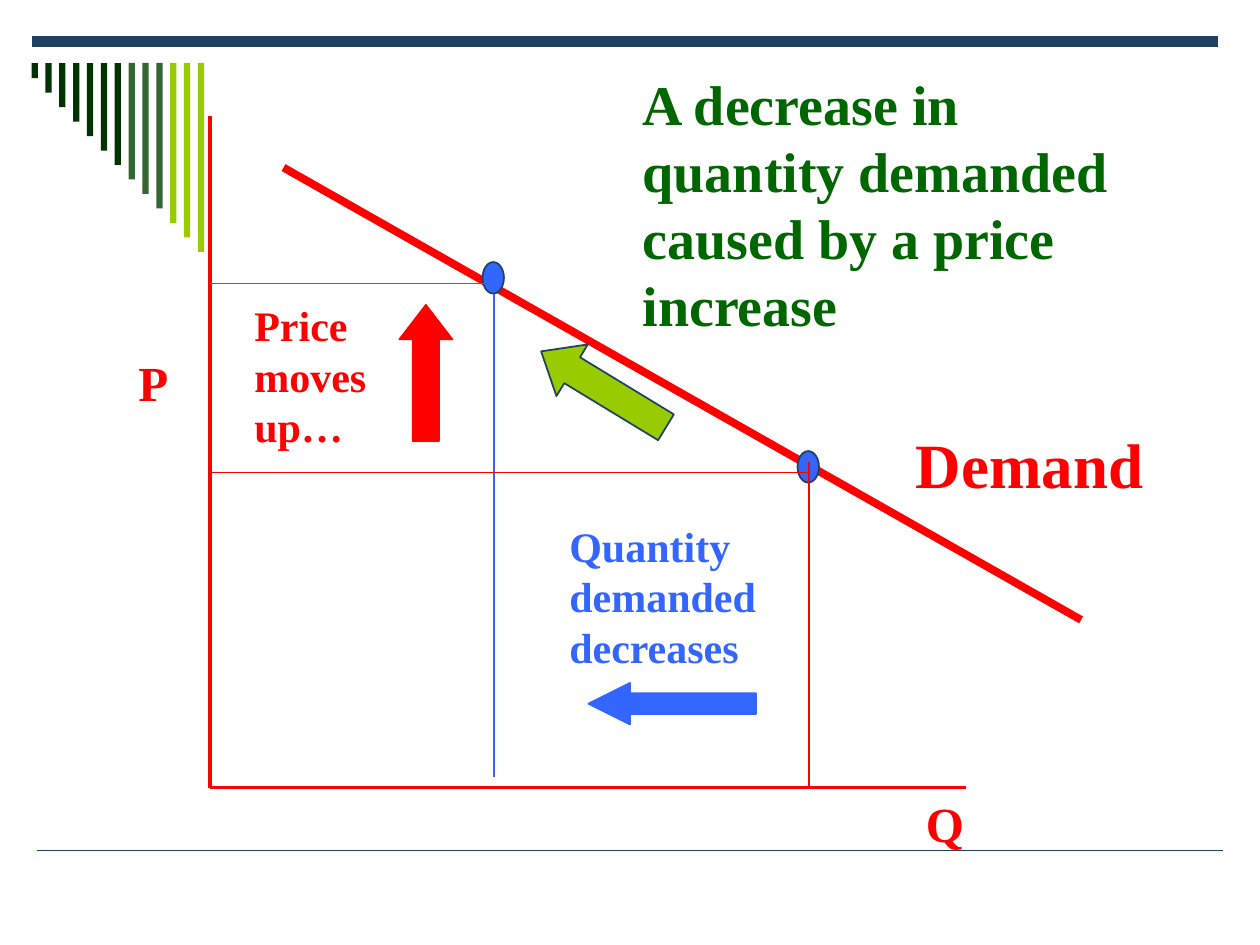
from dataclasses import dataclass

from pptx import Presentation
from pptx.dml.color import RGBColor
from pptx.enum.shapes import MSO_CONNECTOR, MSO_SHAPE
from pptx.enum.text import MSO_ANCHOR, MSO_AUTO_SIZE, PP_ALIGN
from pptx.oxml.ns import qn
from pptx.util import Inches, Pt

STRAIGHT = MSO_CONNECTOR.STRAIGHT
RECTANGLE = MSO_SHAPE.RECTANGLE
OVAL = MSO_SHAPE.OVAL
UP_ARROW = MSO_SHAPE.UP_ARROW
LEFT_ARROW = MSO_SHAPE.LEFT_ARROW
DOWN_ARROW = MSO_SHAPE.DOWN_ARROW

COLORS = {
    "navy": "204162",
    "red": "FF0000",
    "blue": "3366FF",
    "lime": "99CC00",
    "moss": "336633",
    "forest": "003300",
    "title": "006600",
}
FRAME_FORMAT = {
    "word_wrap": True,
    "auto_size": MSO_AUTO_SIZE.NONE,
    "vertical_anchor": MSO_ANCHOR.TOP,
}
FONT_FORMAT = {"name": "Times New Roman", "bold": True}


@dataclass
class Line:
    start: tuple[float, float]
    end: tuple[float, float]
    color: str
    weight: float


@dataclass
class Label:
    text: str
    box: tuple[float, float, float, float]
    size: int
    color: str


@dataclass
class Block:
    kind: int
    box: tuple[float, float, float, float]
    fill: str
    outline: str | None = None
    adjustments: tuple[float, ...] = ()
    rotation: float = 0


def rgb(color: str) -> RGBColor:
    return RGBColor.from_string(COLORS[color])


def draw_line(slide, line: Line) -> None:
    connector = slide.shapes.add_connector(
        STRAIGHT, *(Inches(v) for v in line.start + line.end))
    connector.line.color.rgb = rgb(line.color)
    connector.line.width = Pt(line.weight)
    properties = connector._element.spPr
    properties.append(properties.makeelement(qn("a:effectLst"), {}))


def draw_block(slide, block: Block) -> None:
    shape = slide.shapes.add_shape(block.kind, *(Inches(v) for v in block.box))
    shape.shadow.inherit = False
    shape.fill.solid()
    shape.fill.fore_color.rgb = rgb(block.fill)
    if block.outline:
        shape.line.color.rgb = rgb(block.outline)
        shape.line.width = Pt(1)
    else:
        shape.line.fill.background()
    for index, value in enumerate(block.adjustments):
        shape.adjustments[index] = value
    shape.rotation = block.rotation


def write_label(shape, label: Label) -> None:
    shape.left, shape.top, shape.width, shape.height = (
        Inches(v) for v in label.box)
    frame = shape.text_frame
    for name, value in FRAME_FORMAT.items():
        setattr(frame, name, value)
    paragraph = frame.paragraphs[0]
    paragraph.alignment = PP_ALIGN.LEFT
    run = paragraph.add_run()
    run.text = label.text
    for name, value in FONT_FORMAT.items():
        setattr(run.font, name, value)
    run.font.size = Pt(label.size)
    run.font.color.rgb = rgb(label.color)


def draw_label(slide, label: Label) -> None:
    box = (Inches(v) for v in label.box)
    write_label(slide.shapes.add_textbox(*box), label)


RULES = [
    Line((0.29, 6.75), (9.71, 6.75), "navy", 1),
    Line((0.25, 0.33), (9.67, 0.33), "navy", 6),
]
BAR_COLORS = ["forest"] * 7 + ["moss"] * 3 + ["lime"] * 3
BARS = [
    Block(RECTANGLE, (0.25 + 0.11 * i, 0.5, 0.05, 0.12 + 0.115 * i), color)
    for i, color in enumerate(BAR_COLORS)
]
AXES_AND_DEMAND = [
    Line((1.67, 0.92), (1.67, 6.25), "red", 2.25),
    Line((1.67, 6.25), (7.67, 6.25), "red", 2.25),
    Line((2.25, 1.33), (8.58, 4.92), "red", 4.5),
]
POINTS = [
    Block(OVAL, (left, top, 0.17, 0.25), "blue", "navy")
    for left, top in ((6.33, 3.58), (3.83, 2.08))
]
GUIDES = [
    Line((3.92, 2.25), (1.67, 2.25), "blue", 1),
    Line((3.92, 2.33), (3.92, 6.17), "blue", 1),
    Line((1.67, 3.75), (6.42, 3.75), "red", 1),
    Line((6.42, 3.67), (6.42, 6.25), "red", 1),
]
ARROWS = [
    Block(UP_ARROW, (3.17, 2.42, 0.42, 1.08), "red", "red", (0.5, 0.65)),
    Block(LEFT_ARROW, (4.67, 5.42, 1.33, 0.33), "blue", "blue", (0.5, 1)),
    Block(DOWN_ARROW, (4.55, 2.51, 0.48, 1.16), "lime", "navy",
          (0.5, 0.6), 121.3),
]
TITLE = Label("A decrease in quantity demanded caused by a price increase",
              (5, 0.5, 4.08, 2.23), 32, "title")
LABELS = [
    Label("P", (1, 2.75, 0.5, 0.57), 28, "red"),
    Label("Q", (7.25, 6.25, 1, 0.57), 28, "red"),
    Label("Demand", (7.17, 3.33, 2.25, 0.7), 36, "red"),
    Label("Price moves up…", (1.92, 2.33, 1.58, 1.3), 24, "red"),
    Label("Quantity demanded decreases", (4.42, 4.08, 1.75, 1.3), 24, "blue"),
]


def main() -> None:
    presentation = Presentation()
    presentation.slide_width = Inches(10)
    presentation.slide_height = Inches(7.5)
    slide = presentation.slides.add_slide(presentation.slide_layouts[5])
    write_label(slide.shapes.title, TITLE)
    for line in RULES:
        draw_line(slide, line)
    for bar in BARS:
        draw_block(slide, bar)
    for line in AXES_AND_DEMAND:
        draw_line(slide, line)
    for point in POINTS:
        draw_block(slide, point)
    for line in GUIDES:
        draw_line(slide, line)
    for arrow in ARROWS:
        draw_block(slide, arrow)
    for label in LABELS:
        draw_label(slide, label)
    presentation.save("out.pptx")


if __name__ == "__main__":
    main()
